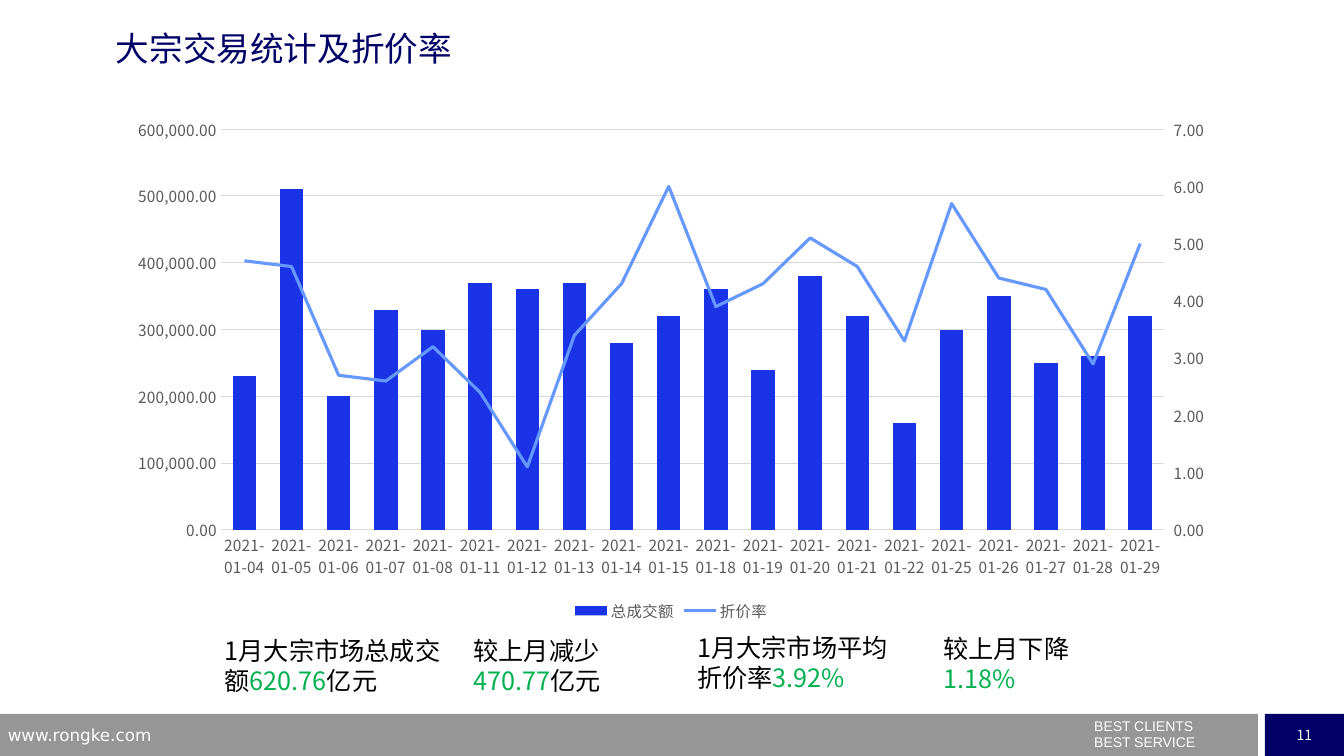
from lxml import etree
from pptx import Presentation
from pptx.chart.data import CategoryChartData
from pptx.dml.color import RGBColor
from pptx.enum import chart as c, shapes, text
from pptx.oxml import ns, parse_xml
from pptx.util import Pt

CJK = "Noto Sans CJK SC"
NAVY, WHITE, BLACK, GREEN = "000066", "FFFFFF", "000000", "00B050"
AXIS_GREY, GRID_GREY = "595959", "D9D9D9"
BAR_BLUE, LINE_BLUE = "1B33E7", "6699FF"


def set_font(font, size, color, name=CJK):
    for attribute, value in {"size": Pt(size), "name": name, "bold": False}.items():
        setattr(font, attribute, value)
    font.color.rgb = RGBColor.from_string(color)


def write_text(shape, paragraphs, size, name=CJK):
    """Fill a shape; each paragraph is a list of (wording, color) runs."""
    frame = shape.text_frame
    frame.word_wrap = True
    for index, runs in enumerate(paragraphs):
        paragraph = frame.add_paragraph() if index else frame.paragraphs[0]
        for wording, color in runs:
            run = paragraph.add_run()
            run.text = wording
            set_font(run.font, size, color, name)
    return frame


presentation = Presentation()
presentation.slide_width, presentation.slide_height = Pt(960), Pt(540)
slide = presentation.slides.add_slide(presentation.slide_layouts[5])

# Title
title = slide.shapes.title
title.left, title.top, title.width, title.height = Pt(82.8), Pt(20), Pt(648), Pt(37)
frame = write_text(title, [[("大宗交易统计及折价率", NAVY)]], 24)
title_format = {"margin_left": 0, "margin_top": 0, "margin_right": 0, "margin_bottom": 0,
                "vertical_anchor": text.MSO_ANCHOR.TOP, "auto_size": text.MSO_AUTO_SIZE.NONE}
for attribute, value in title_format.items():
    setattr(frame, attribute, value)
frame.paragraphs[0].alignment = text.PP_ALIGN.LEFT

# Footer
bars = []
for left, width, color in [(0, 898.5, "969696"), (903.5, 56.5, NAVY)]:
    bar = slide.shapes.add_shape(shapes.MSO_SHAPE.RECTANGLE, Pt(left), Pt(510), Pt(width), Pt(30))
    bar.shadow.inherit = False
    bar.fill.solid()
    bar.fill.fore_color.rgb = RGBColor.from_string(color)
    bar.line.fill.background()
    bars.append(bar)
frame = write_text(bars[1], [[("11", WHITE)]], 10)
frame.word_wrap = False
frame.paragraphs[0].alignment = text.PP_ALIGN.CENTER

motto = slide.shapes.add_textbox(Pt(774.5), Pt(514), Pt(184), Pt(26))
frame = write_text(motto, [[("BEST CLIENTS", WHITE)], [("BEST SERVICE", WHITE)]], 10, "Arial")
for paragraph in frame.paragraphs:
    paragraph.line_spacing = 0.5
frame.paragraphs[1].space_before = Pt(5.75)

website = slide.shapes.add_textbox(Pt(-1.5), Pt(514), Pt(232), Pt(19))
write_text(website, [[("www.rongke.com", WHITE)]], 12, "DejaVu Sans")

# Key figures
key_figures = [
    (153.4, 450, 171.4, [[("1月大宗市场总成交额", BLACK), ("620.76", GREEN), ("亿元", BLACK)]]),
    (331.2, 450, 138.2, [[("较上月减少", BLACK)], [("470.77", GREEN), ("亿元", BLACK)]]),
    (491, 447.8, 156.2, [[("1月大宗市场平均折价率", BLACK), ("3.92%", GREEN)]]),
    (666.7, 448.6, 118.8, [[("较上月下降", BLACK), ("1.18%", GREEN)]]),
]
for left, top, width, paragraphs in key_figures:
    box = slide.shapes.add_textbox(Pt(left), Pt(top), Pt(width), Pt(51))
    write_text(box, paragraphs, 18)

# Chart: turnover columns with the discount rate as a line on the right axis
trading_days = [4, 5, 6, 7, 8, 11, 12, 13, 14, 15, 18, 19, 20, 21, 22, 25, 26, 27, 28, 29]
turnover = [230000, 510000, 200000, 330000, 300000, 370000, 360000, 370000, 280000, 320000,
            360000, 240000, 380000, 320000, 160000, 300000, 350000, 250000, 260000, 320000]
discount_rate = [4.7, 4.6, 2.7, 2.6, 3.2, 2.4, 1.1, 3.4, 4.3, 6,
                 3.9, 4.3, 5.1, 4.6, 3.3, 5.7, 4.4, 4.2, 2.9, 5]
chart_data = CategoryChartData(number_format="#,##0.00")
chart_data.categories = [f"2021-01-{day:02}" for day in trading_days]
chart_data.add_series("总成交额", turnover)
chart_data.add_series("折价率", discount_rate)
chart = slide.shapes.add_chart(c.XL_CHART_TYPE.COLUMN_CLUSTERED, Pt(82.8), Pt(77),
                               Pt(793.4), Pt(370), chart_data).chart
set_font(chart.font, 11, BLACK)
chart.has_title = False
chart.has_legend = True
chart.legend.position = c.XL_LEGEND_POSITION.BOTTOM
chart.legend.include_in_layout = False
set_font(chart.legend.font, 11, AXIS_GREY)

days_axis, turnover_axis = chart.category_axis, chart.value_axis
for axis in (days_axis, turnover_axis):
    axis.major_tick_mark = axis.minor_tick_mark = c.XL_TICK_MARK.NONE
    set_font(axis.tick_labels.font, 11, AXIS_GREY)
turnover_axis.minimum_scale, turnover_axis.maximum_scale = 0, 600000
turnover_axis.major_unit = 100000
turnover_axis.tick_labels.number_format = "#,##0.00"
turnover_axis.tick_labels.number_format_is_linked = False
turnover_axis.format.line.fill.background()
for line in (days_axis.format.line, turnover_axis.major_gridlines.format.line):
    line.color.rgb = RGBColor.from_string(GRID_GREY)
    line.width = Pt(0.75)

columns = chart.plots[0]
columns.gap_width, columns.overlap, columns.vary_by_categories = 100, -27, False
columns.series[0].format.fill.solid()
columns.series[0].format.fill.fore_color.rgb = RGBColor.from_string(BAR_BLUE)

chart_space = chart.element
column_plot = next(chart_space.iter(ns.qn("c:barChart")))
rate_series = list(column_plot.iterchildren(ns.qn("c:ser")))[1]
for invert in list(rate_series.iterchildren(ns.qn("c:invertIfNegative"))):
    rate_series.remove(invert)
secondary = parse_xml(f"""<c:plotArea {ns.nsdecls("c", "a")}>
  <c:lineChart><c:grouping val="standard"/><c:varyColors val="0"/>
    <c:marker val="1"/><c:axId val="5001"/><c:axId val="5002"/></c:lineChart>
  <c:valAx><c:axId val="5002"/>
    <c:scaling><c:orientation val="minMax"/><c:max val="7"/><c:min val="0"/></c:scaling>
    <c:delete val="0"/><c:axPos val="r"/><c:numFmt formatCode="0.00" sourceLinked="0"/>
    <c:majorTickMark val="out"/><c:minorTickMark val="none"/><c:tickLblPos val="nextTo"/>
    <c:spPr><a:ln><a:noFill/></a:ln></c:spPr>
    <c:txPr><a:bodyPr/><a:p><a:pPr><a:defRPr sz="1100" b="0">
      <a:solidFill><a:srgbClr val="{AXIS_GREY}"/></a:solidFill><a:latin typeface="{CJK}"/>
    </a:defRPr></a:pPr></a:p></c:txPr>
    <c:crossAx val="5001"/><c:crosses val="max"/><c:crossBetween val="between"/>
    <c:majorUnit val="1"/></c:valAx>
  <c:catAx><c:axId val="5001"/><c:scaling><c:orientation val="minMax"/></c:scaling>
    <c:delete val="1"/><c:axPos val="b"/><c:crossAx val="5002"/><c:crosses val="autoZero"/></c:catAx>
</c:plotArea>""")
line_plot, rate_axis, hidden_axis = list(secondary)
line_plot.insert(2, rate_series)
column_plot.addnext(line_plot)
last_axis = next(chart_space.iter(ns.qn("c:valAx")))
last_axis.addnext(rate_axis)
rate_axis.addnext(hidden_axis)

rate_line = chart.plots[1].series[0]
rate_line.smooth = False
rate_line.marker.style = c.XL_MARKER_STYLE.NONE
rate_line.format.line.color.rgb = RGBColor.from_string(LINE_BLUE)
rate_line.format.line.width = Pt(2.25)

# Chinese characters take the same typeface as the Latin ones
for root in (slide.element, chart_space):
    for latin in list(root.iter(ns.qn("a:latin"))):
        east_asian = etree.Element(ns.qn("a:ea"), typeface=latin.get("typeface"))
        latin.addnext(east_asian)

presentation.save("out.pptx")
